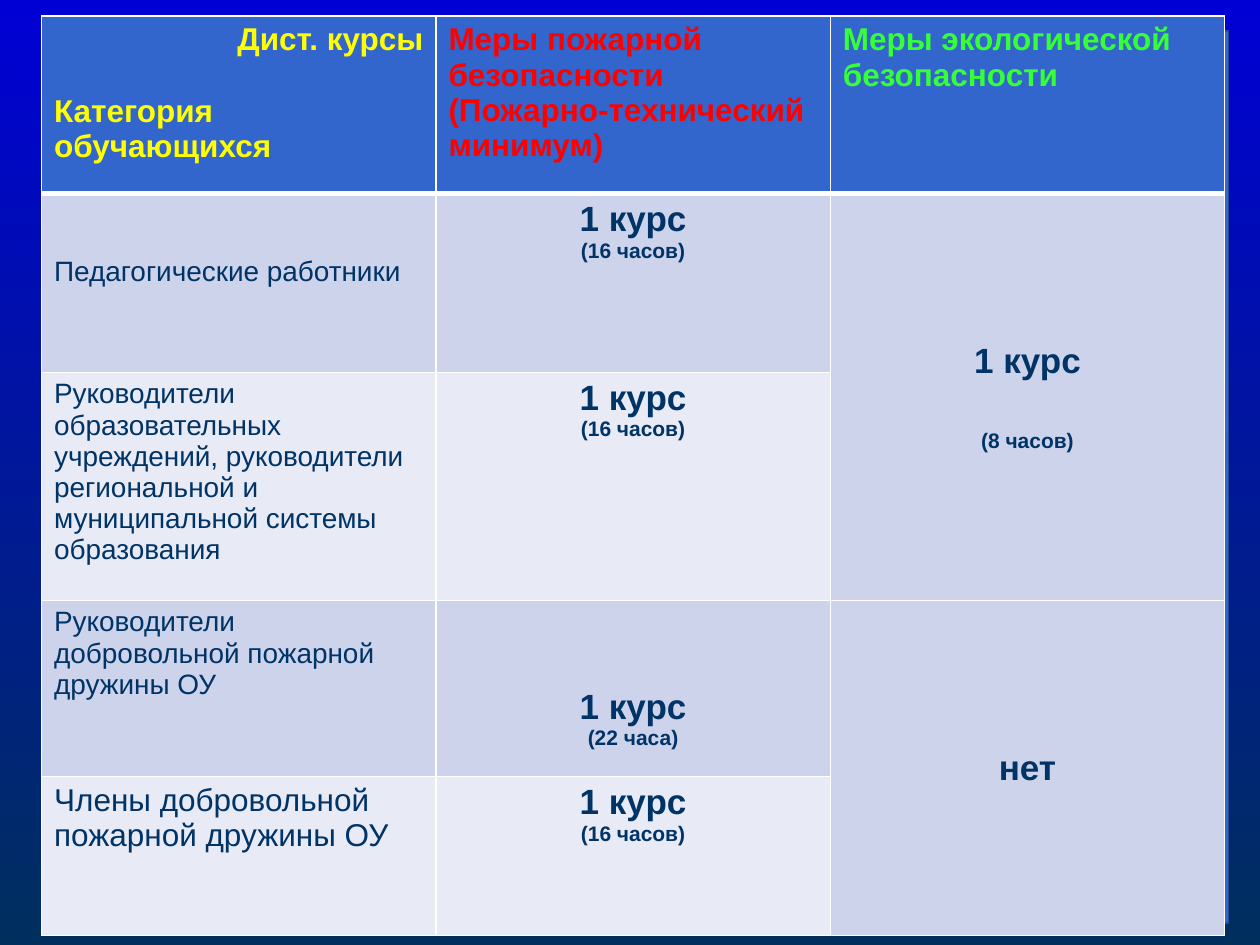
from lxml import etree
from pptx import Presentation
from pptx.dml.color import RGBColor
from pptx.enum.shapes import MSO_SHAPE
from pptx.enum.text import MSO_ANCHOR, PP_ALIGN
from pptx.oxml.ns import qn
from pptx.util import Inches, Pt

LEFT, CENTER, RIGHT = PP_ALIGN.LEFT, PP_ALIGN.CENTER, PP_ALIGN.RIGHT
TOP, MIDDLE = MSO_ANCHOR.TOP, MSO_ANCHOR.MIDDLE
RECTANGLE = MSO_SHAPE.RECTANGLE

WIDTH, HEIGHT = Inches(10), Inches(7.5)
NAVY, YELLOW, RED, GREEN = "003366", "FFFF00", "FF0000", "37FF37"
HEADER_FILL, BAND_FILLS = "3366CC", ("E8EAF6", "CED3EC")
ROW_WEIGHTS = (1.41, 1.42, 1.81, 1.4, 1.26)
COLUMNS = 3


def color(value):
    return RGBColor.from_string(value)


def line(text, size, ink=NAVY, bold=False, align=LEFT, before=0):
    return text, size, ink, bold, align, before


def course(hours, gap=0):
    return [line("1 курс", 20, bold=True, align=CENTER),
            line(f"({hours})", 12, bold=True, align=CENTER, before=gap)]


HEADER = (
    [line("Дист. курсы", 18, YELLOW, True, RIGHT),
     line("Категория обучающихся", 18, YELLOW, True, before=20.7)],
    [line("Меры пожарной безопасности", 18, RED, True),
     line("(Пожарно-технический минимум)", 18, RED, True)],
    [line("Меры экологической безопасности", 18, GREEN, True)],
)
LEARNERS = (
    [line("Педагогические работники", 16)],
    [line("Руководители образовательных учреждений, руководители", 16),
     line("региональной и муниципальной системы образования", 16)],
    [line("Руководители добровольной пожарной дружины ОУ", 16)],
    [line("Члены добровольной пожарной дружины ОУ", 18)],
)
FIRE_HOURS = ("16 часов", "16 часов", "22 часа", "16 часов")
ECOLOGY = {1: course("8 часов", 27.6),
           3: [line("нет", 20, bold=True, align=CENTER)]}
TOP_INSETS = {(1, 0): 0.5, (3, 1): 0.69}


def paint_background(slide):
    fill = slide.background.fill
    fill.gradient()
    fill.gradient_angle = 270
    for stop, position, shade in zip(fill.gradient_stops, (0, 1), ("0000D4", "002F5E")):
        stop.position = position
        stop.color.rgb = color(shade)


def add_panel(slide, box):
    panel = slide.shapes.add_shape(RECTANGLE, *box)
    panel.shadow.inherit = False
    panel.fill.solid()
    panel.fill.fore_color.rgb = color(HEADER_FILL)
    panel.line.color.rgb = color("264B97")
    panel.line.width = Pt(0.85)


def style_cell(cell, fill, bottom, top_inset):
    properties = cell._tc.get_or_add_tcPr()
    for side, points in (("L", 1), ("R", 1), ("T", 1), ("B", bottom)):
        border = etree.SubElement(properties, qn(f"a:ln{side}"), w=str(Pt(points)))
        solid = etree.SubElement(border, qn("a:solidFill"))
        etree.SubElement(solid, qn("a:srgbClr"), val="FFFFFF")
    cell.fill.solid()
    cell.fill.fore_color.rgb = color(fill)
    cell.margin_left = cell.margin_right = Inches(0.1)
    cell.margin_top, cell.margin_bottom = Inches(top_inset), Inches(0.05)


def write_cell(cell, lines, anchor=TOP):
    cell.vertical_anchor = anchor
    frame = cell.text_frame
    frame.text = "\n".join(entry[0] for entry in lines)
    for paragraph, (_, size, ink, bold, align, before) in zip(frame.paragraphs, lines):
        paragraph.alignment = align
        if before:
            paragraph.space_before = Pt(before)
        for run in paragraph.runs:
            run.font.name = "Arial"
            run.font.size = Pt(size)
            run.font.bold = bold
            run.font.color.rgb = color(ink)


def add_course_table(slide, box):
    courses = slide.shapes.add_table(len(ROW_WEIGHTS), COLUMNS, *box).table
    width, height = box[2:]
    for column in courses.columns:
        column.width = int(width / COLUMNS)
    for row, weight in zip(courses.rows, ROW_WEIGHTS):
        row.height = int(height * weight / sum(ROW_WEIGHTS))

    for row in range(len(ROW_WEIGHTS)):
        for column in range(COLUMNS):
            band = 1 if column == 2 else row % 2
            fill = BAND_FILLS[band] if row else HEADER_FILL
            style_cell(courses.cell(row, column), fill, 1 if row else 3,
                       TOP_INSETS.get((row, column), 0.05))

    for column, heading in enumerate(HEADER):
        write_cell(courses.cell(0, column), heading)
    for row, (learner, hours) in enumerate(zip(LEARNERS, FIRE_HOURS), 1):
        write_cell(courses.cell(row, 0), learner)
        write_cell(courses.cell(row, 1), course(hours))
    for row, ecology in ECOLOGY.items():
        courses.cell(row, 2).merge(courses.cell(row + 1, 2))
        write_cell(courses.cell(row, 2), ecology, MIDDLE)


def share_box(left, top, width, height):
    return (int(WIDTH * left), int(HEIGHT * top),
            int(WIDTH * width), int(HEIGHT * height))


def main():
    deck = Presentation()
    deck.slide_width, deck.slide_height = WIDTH, HEIGHT
    slide = deck.slides.add_slide(deck.slide_layouts[6])
    paint_background(slide)
    add_panel(slide, share_box(0.033, 0.033, 0.942, 0.944))
    add_course_table(slide, share_box(0.033, 0.017, 0.939, 0.973))
    deck.save("out.pptx")


if __name__ == "__main__":
    main()
